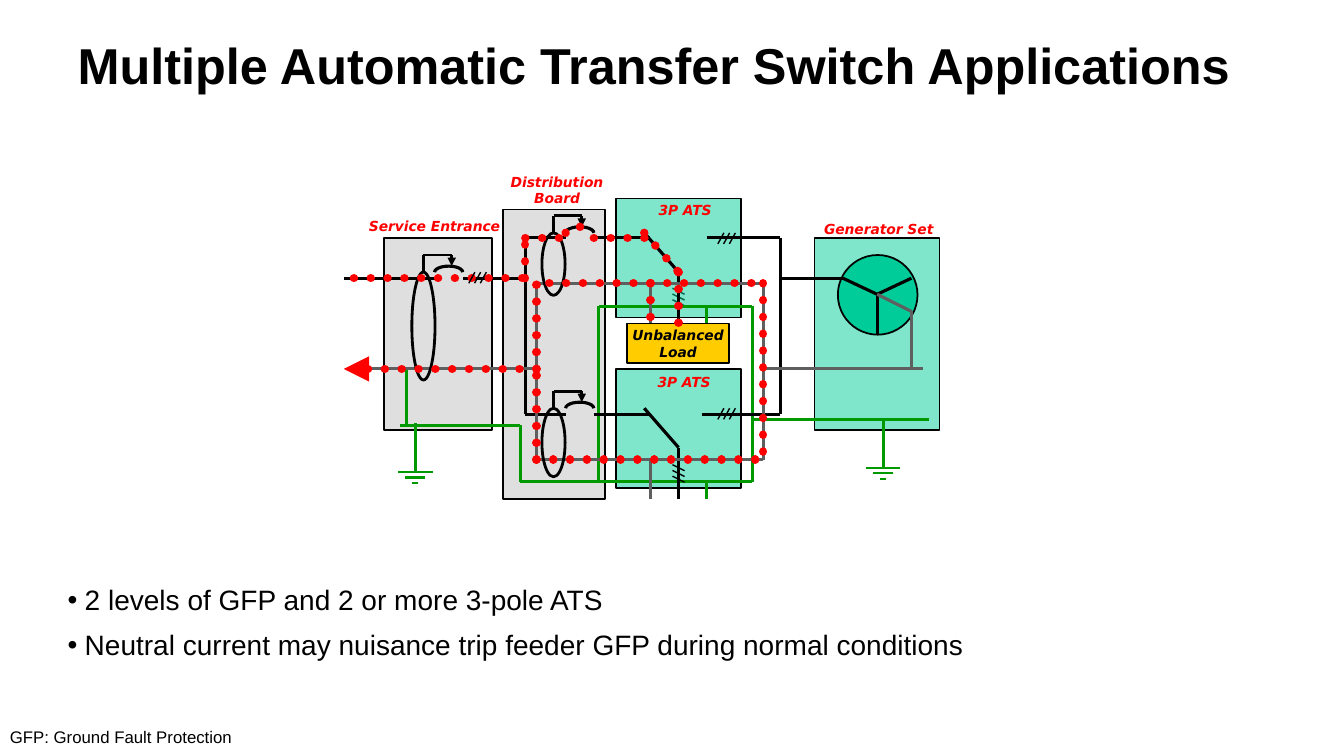
from dataclasses import dataclass
from itertools import pairwise

from lxml import etree
from pptx import Presentation
from pptx import util as u
from pptx.dml.color import RGBColor
from pptx.enum import dml, shapes, text
from pptx.oxml.ns import qn

BLACK, GREY, GREEN, RED = "000000", "5F5F5F", "009900", "FF0000"
TEAL, SILVER, GOLD = "00CC99", "C0C0C0", "FFCC00"
KIND = shapes.MSO_SHAPE
ALIGN = text.PP_ALIGN


@dataclass
class Box:
    """A rectangle or ellipse, by left, top, width and height."""
    x: float
    y: float
    w: float
    h: float
    fill: str | None
    alpha: int = 100
    kind: shapes.MSO_SHAPE = KIND.RECTANGLE
    width: float = 1.25


@dataclass
class Wire:
    """A chain of straight lines through the points."""
    color: str
    points: list[tuple[float, float]]
    width: float = 2.25
    dots: bool = False
    arrow: bool = False


@dataclass
class Label:
    words: str
    x: float
    y: float
    w: float
    h: float = 0.27
    wrap: bool = False


deck = Presentation()
deck.slide_width, deck.slide_height = u.Inches(13.33), u.Inches(7.5)
slide = deck.slides.add_slide(deck.slide_layouts[1])
parts = slide.shapes


def rgb(color: str) -> RGBColor:
    return RGBColor.from_string(color)


def place(shape, x: float, y: float, w: float, h: float) -> None:
    shape.left, shape.top = u.Inches(x), u.Inches(y)
    shape.width, shape.height = u.Inches(w), u.Inches(h)


def style(par, size: float, font: str, color: str = BLACK,
          bold: bool = False, slant: bool = False) -> None:
    par.font.size, par.font.name = u.Pt(size), font
    par.font.bold, par.font.italic = bold, slant
    par.font.color.rgb = rgb(color)


def stroke(line, color: str, width: float, dots: bool = False) -> None:
    line.color.rgb, line.width = rgb(color), u.Pt(width)
    if dots:
        line.dash_style = dml.MSO_LINE.ROUND_DOT
        line._get_or_add_ln().set("cap", "rnd")


def draw_box(box: Box):
    shape = parts.add_shape(box.kind, *map(u.Inches, (box.x, box.y, box.w, box.h)))
    shape.shadow.inherit = False
    stroke(shape.line, BLACK, box.width)
    if box.fill is None:
        shape.fill.background()
        return shape
    shape.fill.solid()
    shape.fill.fore_color.rgb = rgb(box.fill)
    if box.alpha < 100:
        tint = shape.fill._xPr.find(".//" + qn("a:srgbClr"))
        etree.SubElement(tint, qn("a:alpha"), val=str(box.alpha * 1000))
    return shape


def draw_wire(wire: Wire) -> None:
    for start, end in pairwise(wire.points):
        ends = map(u.Inches, (*start, *end))
        line = parts.add_connector(shapes.MSO_CONNECTOR.STRAIGHT, *ends)
        stroke(line.line, wire.color, wire.width, wire.dots)
        if wire.arrow:
            etree.SubElement(line.line._get_or_add_ln(), qn("a:tailEnd"), type="triangle")
        etree.SubElement(line._element.spPr, qn("a:effectLst"))


def draw_arc(x: float, y: float, color: str = BLACK, width: float = 2.25) -> None:
    """Breaker contact centred on x, y."""
    arc = parts.add_shape(KIND.RIGHT_BRACKET,
                          *map(u.Inches, (x - 0.03, y - 0.14, 0.06, 0.28)))
    arc.rotation, arc.adjustments[0] = 270, 2.344
    arc.shadow.inherit = False
    arc.fill.background()
    stroke(arc.line, color, width, color == RED)


def draw_coil(x: float, y: float, h: float) -> None:
    """Sensor ring with its trip arrow."""
    draw_box(Box(x - 0.115, y, 0.23, h, None, kind=KIND.OVAL, width=2))
    top, far = y - 0.17, x + 0.28
    draw_wire(Wire(BLACK, [(x, y), (x, top), (far, top)], 2))
    draw_wire(Wire(BLACK, [(far, top), (far, top + 0.11)], 2, arrow=True))


def draw_ticks(x: float, y: float, across: bool) -> None:
    """Three phase marks on a level or an upright wire."""
    for i in range(3):
        step = i * 0.057
        if across:
            ends = [(x + step, y), (x + step - 0.06, y + 0.11)]
        else:
            ends = [(x, y + step), (x - 0.12, y + step - 0.06)]
        draw_wire(Wire(BLACK, ends, 1))


def draw_earth(x: float, top: float, y: float) -> None:
    for i, half in enumerate((0.17, 0.1, 0.03)):
        bar = y + i * 0.057
        draw_wire(Wire(GREEN, [(x - half, bar), (x + half, bar)], 1.5))
    draw_wire(Wire(GREEN, [(x, top), (x, y)]))


# Title and list
title, body = slide.placeholders
place(title, 0.67, 0.22, 11.75, 0.94)
title.text_frame.text = "Multiple Automatic Transfer Switch Applications"
title.text_frame.vertical_anchor = text.MSO_ANCHOR.TOP
title.text_frame.auto_size = text.MSO_AUTO_SIZE.NONE
head = title.text_frame.paragraphs[0]
head.alignment, head.line_spacing = ALIGN.LEFT, u.Pt(48)
style(head, 36, "Arial", bold=True)

place(body, 0.67, 5.78, 9.79, 1.11)
frame = body.text_frame
frame.auto_size = text.MSO_AUTO_SIZE.NONE
frame.margin_left = frame.margin_right = frame.margin_top = frame.margin_bottom = 0
frame.text = ("2 levels of GFP and 2 or more 3-pole ATS\n"
              "Neutral current may nuisance trip feeder GFP during normal conditions")
for par in frame.paragraphs:
    style(par, 20, "Arial")
    par.space_before, par.space_after = u.Pt(0), u.Pt(8.4)
    props = par._p.get_or_add_pPr()
    props.set("marL", str(u.Inches(0.17)))
    props.set("indent", str(u.Inches(-0.17)))

# Cabinets and generator
draw_ticks(6.79, 2.92, False)
for box in (Box(8.08, 2.36, 1.24, 1.91, TEAL, 50), Box(4.99, 2.08, 1.01, 2.87, SILVER, 50),
            Box(6.11, 1.97, 1.24, 1.18, TEAL, 50), Box(6.11, 3.66, 1.24, 1.18, TEAL, 50),
            Box(3.81, 2.36, 1.07, 1.91, SILVER, 50),
            Box(8.31, 2.53, 0.79, 0.79, TEAL, kind=KIND.OVAL)):
    draw_box(box)

# Ground, phase and neutral wires
WIRES = {
    GREEN: [[(5.94, 4.78), (5.94, 3.04), (7.46, 3.04), (7.46, 4.78)],
            [(4.03, 3.66), (4.03, 4.22)], [(7.01, 3.04), (7.01, 3.21)],
            [(3.97, 4.22), (5.16, 4.22), (5.16, 4.78), (7.46, 4.78)],
            [(7.01, 4.78), (7.01, 4.95)], [(7.46, 4.16), (9.21, 4.16)]],
    BLACK: [[(5.89, 2.36), (6.45, 2.36)], [(6.39, 2.31), (6.73, 2.7), (6.73, 3.21)],
            [(5.89, 4.11), (6.45, 4.11)], [(6.39, 4.05), (6.73, 4.44), (6.73, 4.95)],
            [(7.74, 2.76), (8.36, 2.76), (8.7, 2.92), (9.04, 2.76)],
            [(8.7, 2.92), (8.7, 3.32)], [(3.41, 2.76), (4.31, 2.76)],
            [(4.59, 2.76), (5.21, 2.76), (5.21, 2.36), (5.61, 2.36)],
            [(5.21, 2.76), (5.21, 4.11), (5.61, 4.11)],
            [(7.01, 2.36), (7.74, 2.36), (7.74, 2.76), (7.74, 4.11), (6.96, 4.11)]],
    GREY: [[(8.7, 2.92), (9.04, 3.09), (9.04, 3.66)], [(9.15, 3.66), (7.57, 3.66)],
           [(6.45, 2.81), (6.45, 3.21)], [(6.45, 4.56), (6.45, 4.95)],
           [(3.47, 3.66), (5.32, 3.66), (5.32, 2.81), (6.45, 2.81)],
           [(5.94, 2.81), (7.57, 2.81), (7.57, 4.56)],
           [(7.57, 4.56), (5.32, 4.56), (5.32, 3.66)]],
}
for color, runs in WIRES.items():
    for points in runs:
        draw_wire(Wire(color, points))

# Breakers, sensors and load
for spot in ((4.45, 2.67), (5.75, 2.28), (5.75, 4.02)):
    draw_arc(*spot)
for coil in ((4.2, 2.7, 1.07), (5.49, 2.31, 0.62), (5.49, 4.05, 0.68)):
    draw_coil(*coil)
load = draw_box(Box(6.22, 3.21, 1.01, 0.39, GOLD)).text_frame
load.text, load.word_wrap = "Unbalanced\nLoad", False
load.vertical_anchor = text.MSO_ANCHOR.MIDDLE
for par in load.paragraphs:
    par.alignment = ALIGN.CENTER
    style(par, 9.9, "DejaVu Sans", bold=True, slant=True)

# Neutral current path
for points in ([(6.45, 2.81), (6.45, 3.21)], [(6.45, 2.81), (5.32, 2.81)],
               [(5.32, 3.66), (5.32, 2.81)], [(5.21, 2.76), (5.21, 2.36), (5.61, 2.36)],
               [(5.89, 2.36), (6.45, 2.36)], [(6.39, 2.31), (6.73, 2.7), (6.73, 3.21)],
               [(6.45, 2.81), (7.57, 2.81), (7.57, 4.56)], [(5.32, 4.56), (7.57, 4.56)],
               [(5.32, 4.56), (5.32, 3.66)], [(3.51, 2.76), (5.21, 2.76)]):
    draw_wire(Wire(RED, points, 6, dots=True))
draw_wire(Wire(RED, [(5.32, 3.66), (3.41, 3.66)], 6, dots=True, arrow=True))
draw_arc(5.75, 2.28, RED, 6)

# Phase marks and earths
for x, y, across in ((4.71, 2.7, True), (7.18, 2.31, True), (7.18, 4.05, True),
                     (6.79, 4.67, False)):
    draw_ticks(x, y, across)
draw_earth(8.76, 4.16, 4.64)
draw_earth(4.12, 4.2, 4.68)


# Labels and footnote
def write(label: Label):
    area = parts.add_textbox(*map(u.Inches, (label.x, label.y, label.w, label.h))).text_frame
    area.word_wrap, area.text = label.wrap, label.words
    return area.paragraphs[0]


for label in (Label("Generator Set", 8.07, 2.14, 1.29), Label("3P ATS", 6.41, 3.66, 0.75),
              Label("Service Entrance", 3.53, 2.11, 1.56), Label("3P ATS", 6.42, 1.95, 0.75),
              Label("Distribution Board", 4.96, 1.67, 1.13, 0.43, True)):
    par = write(label)
    par.alignment = ALIGN.CENTER
    style(par, 9.9, "DejaVu Sans", RED, True, True)
style(write(Label("GFP: Ground Fault Protection", 0, 7.16, 2.43, 0.3)), 12, "Arial")

deck.save("out.pptx")
